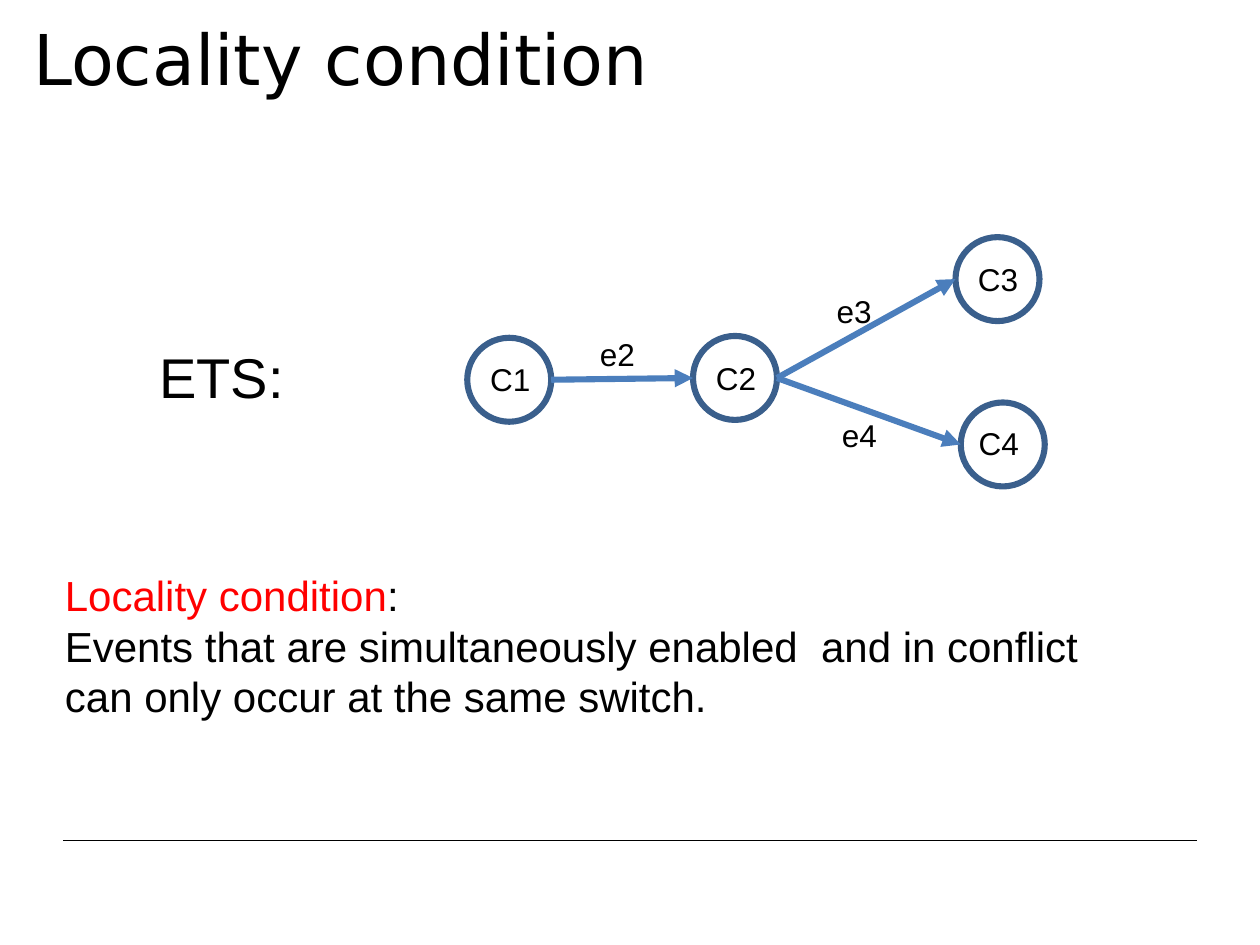
from lxml import etree
from pptx import Presentation
from pptx.dml.color import RGBColor
from pptx.enum import shapes, text
from pptx.oxml.ns import qn
from pptx.util import Pt


def add_label(x, y, width, height, lines, size, font="Arial"):
    """Add a black text box and return its text frame."""
    frame = slide.shapes.add_textbox(Pt(x), Pt(y), Pt(width), Pt(height)).text_frame
    frame.word_wrap = True
    frame.text = lines
    for paragraph in frame.paragraphs:
        paragraph.font.size = Pt(size)
        paragraph.font.name = font
        paragraph.font.color.rgb = RGBColor.from_string("000000")
    return frame


def add_line(start, end, color, width):
    line = slide.shapes.add_connector(
        shapes.MSO_CONNECTOR.STRAIGHT, *(Pt(v) for v in (*start, *end)))
    line.line.color.rgb = RGBColor.from_string(color)
    line.line.width = Pt(width)
    etree.SubElement(line._element.spPr, qn("a:effectLst"))
    return line


prs = Presentation()
prs.slide_width, prs.slide_height = Pt(720), Pt(540)
slide = prs.slides.add_slide(prs.slide_layouts[6])

add_line((36, 480), (684, 480), "000000", 0.5)
title = add_label(12, -12, 648, 90, "Locality condition", 40, "DejaVu Sans")
title.vertical_anchor = text.MSO_ANCHOR.MIDDLE

definition = add_label(
    30, 322, 630, 94.5,
    "Locality condition\nEvents that are simultaneously enabled  and in conflict "
    "can only occur at the same switch.", 24)
heading = definition.paragraphs[0]
heading.runs[0].font.color.rgb = RGBColor.from_string("FF0000")
heading.add_run().text = ":"

add_label(84, 192, 186, 46, "ETS:", 32)

# State: top left of its circle, then of its label
diameter = 48
states = {
    "C1": ((267, 193), (273, 202.3)),
    "C2": ((396, 192), (402, 201.6)),
    "C3": ((546, 135.5), (551.7, 145.2)),
    "C4": ((549, 230), (552.2, 238.5)),
}
for state, ((x, y), label_at) in states.items():
    circle = slide.shapes.add_shape(
        shapes.MSO_SHAPE.OVAL, Pt(x), Pt(y), Pt(diameter), Pt(diameter))
    circle.shadow.inherit = False
    circle.fill.background()
    circle.line.color.rgb = RGBColor.from_string("3A5F8C")
    circle.line.width = Pt(3.5)
    add_label(*label_at, 42, 29, state, 18)

# Event: source state, target state, top left of its label
events = {
    "e2": ("C1", "C2", (335.7, 188)),
    "e3": ("C2", "C3", (471, 163.3)),
    "e4": ("C2", "C4", (474, 234)),
}
for event, (source, target, label_at) in events.items():
    (x1, y1), (x2, y2) = states[source][0], states[target][0]
    radius = diameter / 2
    arrow = add_line((x1 + diameter, y1 + radius), (x2, y2 + radius), "4B7EBC", 3.5)
    etree.SubElement(arrow.line._get_or_add_ln(), qn("a:tailEnd"), type="triangle")
    add_label(*label_at, 42, 29, event, 18)

prs.save("out.pptx")
